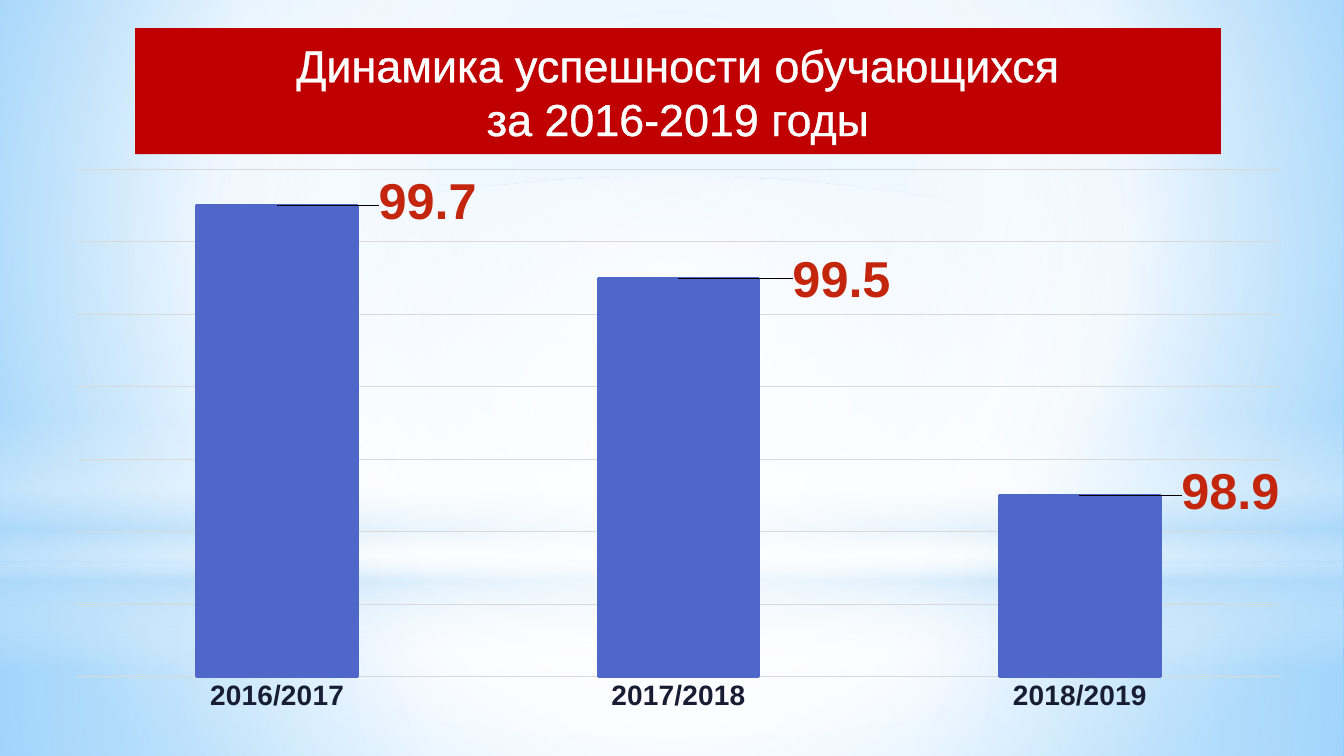
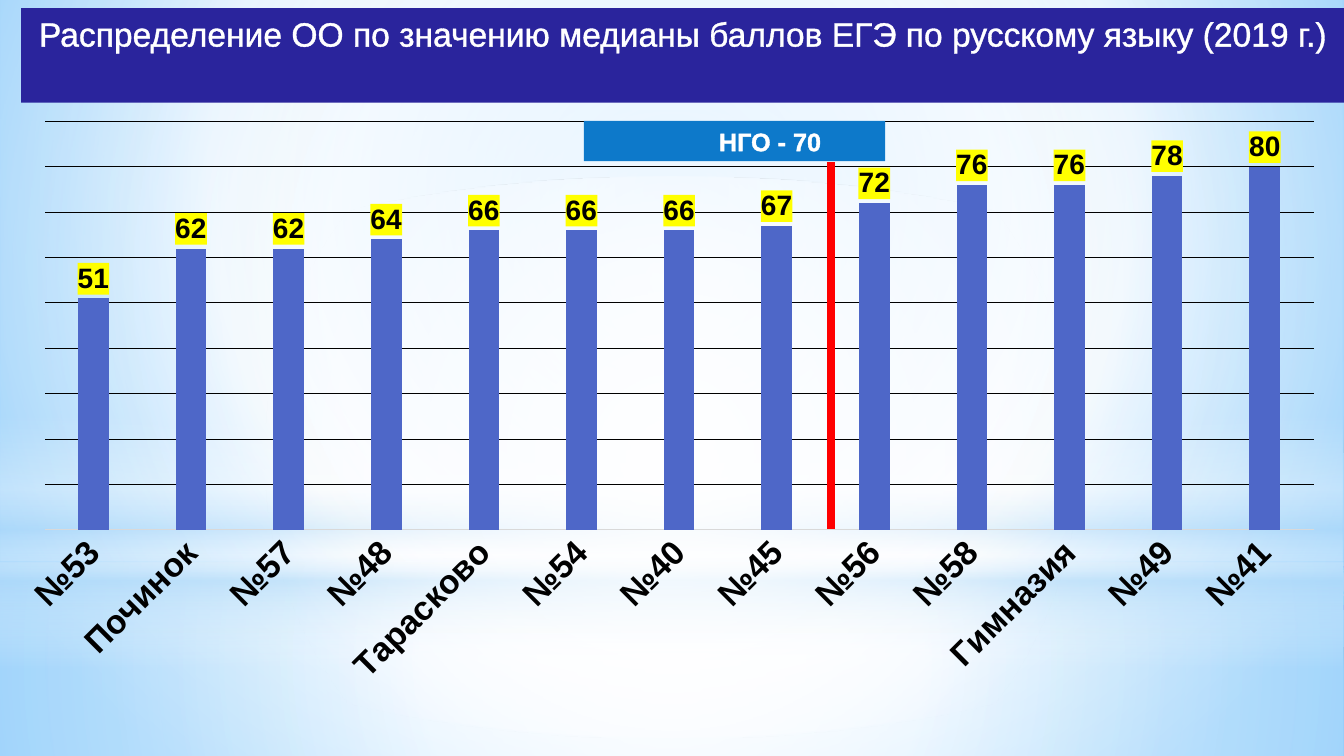
from dataclasses import dataclass
from typing import Optional

from lxml import etree
from pptx import Presentation
from pptx.chart.data import CategoryChartData
from pptx.dml.color import RGBColor
from pptx.enum import chart as ch, shapes, text
from pptx.oxml import parse_xml
from pptx.oxml.ns import nsdecls, qn
from pptx.util import Inches, Pt

WHITE = RGBColor(0xFF, 0xFF, 0xFF)
BLACK = RGBColor(0, 0, 0)
NAVY = RGBColor(0x19, 0x1D, 0x34)
INDIGO = RGBColor(0x2A, 0x24, 0x9C)
BAR_BLUE = RGBColor(0x4E, 0x67, 0xC8)
SKY = RGBColor(0x0D, 0x79, 0xCA)
MIST = RGBColor(0xB4, 0xDC, 0xFA)
BG_EDGE = RGBColor(0x9E, 0xD5, 0xFF)
BG_FAR = RGBColor(0x5B, 0xB9, 0xFF)
CRIMSON = RGBColor(0xC0, 0, 0)
RUST = RGBColor(0xC3, 0x26, 0x0C)
RED = RGBColor(0xFF, 0, 0)
YELLOW = RGBColor(0xFF, 0xFF, 0)
GRAY = RGBColor(0xD9, 0xD9, 0xD9)
FONT = "Arial"
CENTER = (50, 50, 50, 50)


@dataclass
class Gradient:
    stops: list  # (position %, colour, opacity %)
    focus: Optional[tuple] = None  # left, top, right, bottom %; None is a vertical ramp


@dataclass
class Glow:
    box: tuple
    gradient: Gradient
    kind: shapes.MSO_SHAPE = shapes.MSO_SHAPE.RECTANGLE


@dataclass
class Banner:
    box: tuple
    words: str
    fill: RGBColor
    size: float
    bold: bool = False
    align: text.PP_ALIGN = text.PP_ALIGN.CENTER
    anchor: text.MSO_ANCHOR = text.MSO_ANCHOR.MIDDLE
    left_inset: float = 0.1


@dataclass
class ColumnChart:
    box: tuple
    values: dict
    plot: tuple  # inner plot area as fractions of the chart
    scale: tuple  # minimum, maximum, step
    gap: int
    overlap: int
    grid: RGBColor
    axis_size: float
    axis_color: RGBColor
    label_size: float
    label_color: RGBColor
    label_fill: Optional[RGBColor] = None
    label_shifts: tuple = ()
    slanted: bool = False
    outlined: bool = False


BACKDROP = Gradient([(0, BG_EDGE, 100), (60, WHITE, 100), (100, BG_FAR, 100)], (20, 10, 20, 60))
GLOWS = [
    Glow((0, 5.58, 13.33, 1.92),
         Gradient([(0, WHITE, 91), (37, WHITE, 76), (100, MIST, 79)], CENTER)),
    Glow((0, 0, 13.33, 5.58),
         Gradient([(0, WHITE, 89), (48, WHITE, 62), (100, MIST, 79)], CENTER)),
    Glow((0, 4.12, 13.33, 2.5),
         Gradient([(0, WHITE, 0), (29, WHITE, 30), (45, MIST, 40),
                   (55, WHITE, 26), (65, MIST, 60), (100, WHITE, 0)])),
    Glow((0, 1.75, 13.33, 5.58),
         Gradient([(0, WHITE, 100), (56, WHITE, 0)], CENTER), shapes.MSO_SHAPE.OVAL),
]

PROGRESS_TITLE = Banner((1.34, 0.28, 10.77, 1.25),
                        "Динамика успешности обучающихся\vза 2016-2019 годы", CRIMSON, 32)
PROGRESS_CHART = ColumnChart(
    box=(0.51, 1.57, 12.44, 5.59),
    values={"2016/2017": 99.7, "2017/2018": 99.5, "2018/2019": 98.9},
    plot=(0.02, 0.02, 0.96, 0.9), scale=(98.4, 99.8, 0.2), gap=150, overlap=0,
    grid=GRAY, axis_size=20, axis_color=NAVY, label_size=36, label_color=RUST,
    label_shifts=((0.12, 0.05), (0.13, 0.06), (0.12, 0.05)), outlined=True)

MEDIAN_TITLE = Banner(
    (0.21, 0.08, 13.13, 0.94),
    "Распределение ОО по значению медианы баллов ЕГЭ по русскому языку (2019 г.)",
    INDIGO, 24, anchor=text.MSO_ANCHOR.TOP)
MEDIAN_CHART = ColumnChart(
    box=(0.13, 1.2, 12.99, 5.99),
    values={"№53": 51, "Починок": 62, "№57": 62, "№48": 64, "Тарасково": 66,
            "№54": 66, "№40": 66, "№45": 67, "№56": 72, "№58": 76,
            "Гимназия": 76, "№49": 78, "№41": 80},
    plot=(0.024, 0, 0.969, 0.677), scale=(0, 90, 10), gap=219, overlap=-27,
    grid=BLACK, axis_size=24, axis_color=BLACK, label_size=20, label_color=BLACK,
    label_fill=YELLOW, slanted=True)
DISTRICT_MEDIAN = Banner((5.79, 1.2, 2.99, 0.4), "НГО - 70", SKY, 18, bold=True,
                         align=text.PP_ALIGN.LEFT, left_inset=1.34)


def inches(box: tuple) -> list:
    return [Inches(length) for length in box]


def gradient_xml(gradient: Gradient):
    stops = "".join(
        f'<a:gs pos="{pos * 1000}"><a:srgbClr val="{color}">'
        f'<a:alpha val="{opacity * 1000}"/></a:srgbClr></a:gs>'
        for pos, color, opacity in gradient.stops)
    if gradient.focus:
        sides = " ".join(f'{side}="{value * 1000}"' for side, value in zip("ltrb", gradient.focus))
        course = f'<a:path path="circle"><a:fillToRect {sides}/></a:path>'
    else:
        course = '<a:lin ang="5400000" scaled="0"/>'
    return parse_xml(f'<a:gradFill {nsdecls("a")} rotWithShape="1">'
                     f'<a:gsLst>{stops}</a:gsLst>{course}</a:gradFill>')


def apply_gradient(fill, holder, gradient: Gradient) -> None:
    fill.solid()
    holder.replace(holder.find(qn("a:solidFill")), gradient_xml(gradient))


def add_plain_shape(slide, kind: shapes.MSO_SHAPE, box: tuple):
    shape = slide.shapes.add_shape(kind, *inches(box))
    shape.shadow.inherit = False
    shape.line.fill.background()
    return shape


def build_master(prs, slide) -> None:
    """Give the master its backdrop and the glows that every slide shows."""
    master = prs.slide_master
    fill = master.background.fill
    fill.solid()
    apply_gradient(fill, master.element.find(".//" + qn("p:bgPr")), BACKDROP)
    for order, glow in enumerate(GLOWS):
        shape = add_plain_shape(slide, glow.kind, glow.box)
        apply_gradient(shape.fill, shape.element.spPr, glow.gradient)
        shape.element.nvSpPr.cNvPr.set("id", str(100 + order))
        master.shapes.element.insert(2 + order, shape.element)


def add_banner(slide, banner: Banner) -> None:
    shape = add_plain_shape(slide, shapes.MSO_SHAPE.RECTANGLE, banner.box)
    shape.fill.solid()
    shape.fill.fore_color.rgb = banner.fill
    frame = shape.text_frame
    frame.text = banner.words
    frame.word_wrap = True
    frame.vertical_anchor = banner.anchor
    frame.margin_left = Inches(banner.left_inset)
    paragraph = frame.paragraphs[0]
    paragraph.alignment = banner.align
    for run in paragraph.runs:
        style_font(run.font, banner.size, WHITE, banner.bold)
        # White outline around the letters
        run.font.element.insert(0, parse_xml(
            f'<a:ln {nsdecls("a")} w="{Pt(1.45)}"><a:solidFill>'
            f'<a:srgbClr val="{WHITE}"/></a:solidFill></a:ln>'
        )) if hasattr(run.font, "element") else run._r.get_or_add_rPr().insert(0, parse_xml(
            f'<a:ln {nsdecls("a")} w="{Pt(1.45)}"><a:solidFill>'
            f'<a:srgbClr val="{WHITE}"/></a:solidFill></a:ln>'))


def style_font(font, size: float, color: RGBColor, bold: bool = True) -> None:
    font.name = FONT
    font.size = Pt(size)
    font.bold = bold
    font.color.rgb = color


def style_line(line, color: RGBColor, width: float) -> None:
    line.color.rgb = color
    line.width = Pt(width)


def layout_xml(x: float, y: float, size: tuple = ()):
    """Manual layout: a label shift, or an inner plot area when a size is given."""
    parts = [("x", x), ("y", y)]
    if size:
        parts = [("layoutTarget", "inner"), ("xMode", "edge"), ("yMode", "edge"),
                 *parts, ("w", size[0]), ("h", size[1])]
    body = "".join(f'<c:{tag} val="{value}"/>' for tag, value in parts)
    return parse_xml(f'<c:layout {nsdecls("c")}><c:manualLayout>{body}'
                     f'</c:manualLayout></c:layout>')


def add_column_chart(slide, design: ColumnChart) -> None:
    data = CategoryChartData()
    data.categories = list(design.values)
    data.add_series("Series 1", list(design.values.values()))
    chart = slide.shapes.add_chart(ch.XL_CHART_TYPE.COLUMN_CLUSTERED,
                                   *inches(design.box), data).chart
    chart.has_legend = False
    chart.has_title = False
    style_font(chart.font, 10, BLACK, False)

    # Plot area and columns
    plot = chart.plots[0]
    plot.vary_by_categories = False
    plot.gap_width = design.gap
    plot.overlap = design.overlap
    area = chart.element.find(".//" + qn("c:plotArea"))
    for old in area.findall(qn("c:layout")):
        area.remove(old)
    area.insert(0, layout_xml(*design.plot[:2], design.plot[2:]))
    series = plot.series[0]
    series.format.fill.solid()
    series.format.fill.fore_color.rgb = BAR_BLUE
    if design.outlined:
        style_line(series.format.line, BAR_BLUE, 2.25)

    # Axes
    values = chart.value_axis
    values.minimum_scale, values.maximum_scale, values.major_unit = design.scale
    values.visible = False
    values.has_major_gridlines = True
    style_line(values.major_gridlines.format.line, design.grid, 0.75)
    categories = chart.category_axis
    categories.major_tick_mark = ch.XL_TICK_MARK.NONE
    style_line(categories.format.line, GRAY, 0.75)
    style_font(categories.tick_labels.font, design.axis_size, design.axis_color)
    if design.slanted:
        body = categories._element.find(".//" + qn("a:bodyPr"))
        body.set("rot", "-2700000")
        body.set("vert", "horz")

    # Value labels
    labels = series.data_labels
    labels.show_value = True
    labels.position = ch.XL_LABEL_POSITION.OUTSIDE_END
    style_font(labels.font, design.label_size, design.label_color)
    if design.label_fill:
        label_box = parse_xml(f'<c:spPr {nsdecls("c", "a")}><a:solidFill>'
                              f'<a:srgbClr val="{design.label_fill}"/></a:solidFill></c:spPr>')
        labels._element.find(qn("c:txPr")).addprevious(label_box)
    for index, shift in enumerate(design.label_shifts):
        label = series.points[index].data_label
        style_font(label.font, design.label_size, design.label_color)
        label.position = ch.XL_LABEL_POSITION.OUTSIDE_END
        entry = labels._element.findall(qn("c:dLbl"))[index]
        entry.find(qn("c:idx")).addnext(layout_xml(*shift))


def add_marker_line(slide, start: tuple, end: tuple, color: RGBColor, width: float) -> None:
    line = slide.shapes.add_connector(shapes.MSO_CONNECTOR.STRAIGHT, *inches(start + end))
    style_line(line.line, color, width)
    etree.SubElement(line.element.spPr, qn("a:effectLst"))


def main() -> None:
    prs = Presentation()
    prs.slide_width, prs.slide_height = Inches(13.33), Inches(7.5)
    blank = prs.slide_layouts[6]

    # Progress over three years
    progress = prs.slides.add_slide(blank)
    build_master(prs, progress)
    add_banner(progress, PROGRESS_TITLE)
    add_column_chart(progress, PROGRESS_CHART)

    # Median exam score by school
    median = prs.slides.add_slide(blank)
    add_banner(median, MEDIAN_TITLE)
    add_column_chart(median, MEDIAN_CHART)
    add_banner(median, DISTRICT_MEDIAN)
    add_marker_line(median, (8.24, 1.61), (8.24, 5.25), RED, 6)

    prs.save("out.pptx")


if __name__ == "__main__":
    main()
